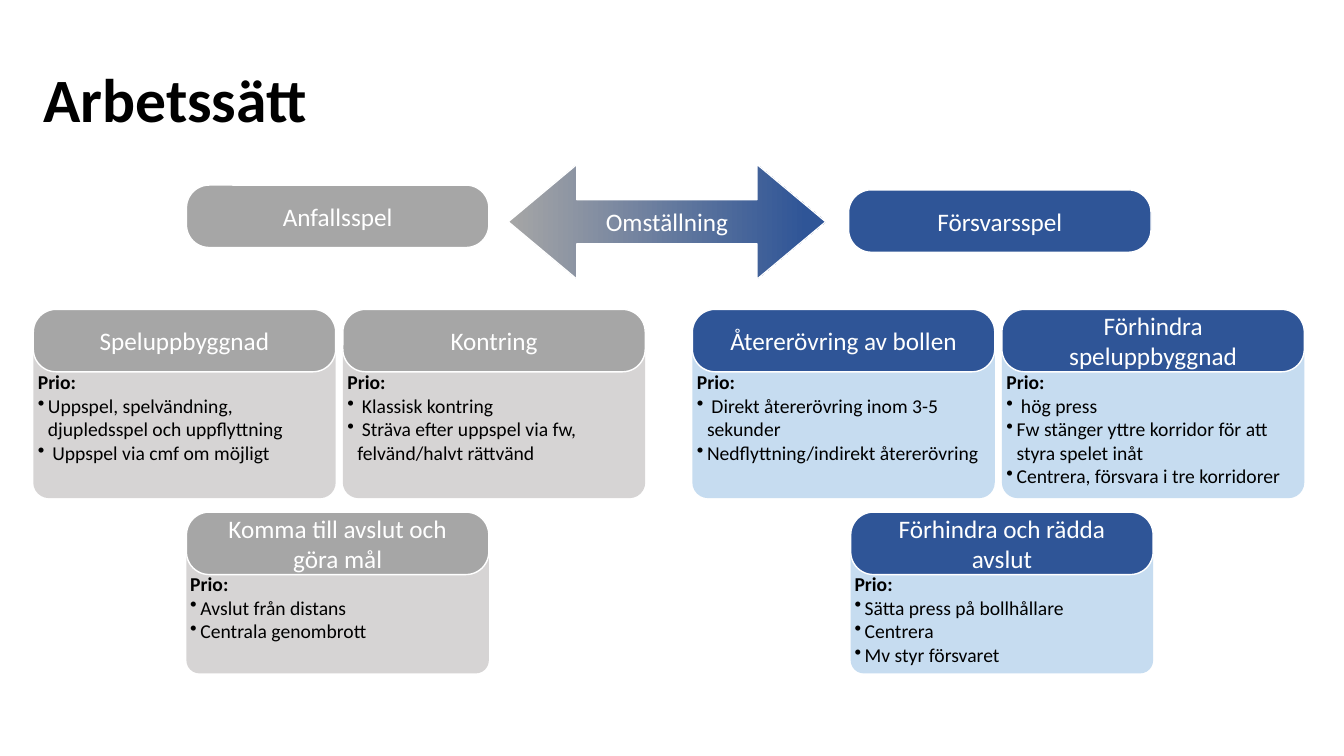
"""Build a slide on ways of working in attack, transition and defence."""
from pptx import Presentation
from pptx.dml.color import RGBColor
from pptx.enum.shapes import MSO_SHAPE as Preset
from pptx.enum.text import MSO_ANCHOR as Anchor, MSO_AUTO_SIZE as AutoSize, PP_ALIGN as Align
from pptx.oxml.ns import qn
from pptx.oxml.xmlchemy import OxmlElement
from pptx.util import Pt

FONT = "Calibri"
BLACK, WHITE = "000000", "FFFFFF"
ATTACK, ATTACK_PALE = "A6A6A6", "D0CECE"
DEFENCE, DEFENCE_PALE = "2F5597", "BDD7EE"
CARD_WIDTH, HEADER_HEIGHT, PANEL_DROP = 216, 44.6, 19.4
TOP_ROW, BOTTOM_ROW = (221, 115.4), (365.8, 95.8)

CARDS = [
    (23.8, TOP_ROW, ATTACK, ATTACK_PALE, "Speluppbyggnad",
     ["Uppspel, spelvändning, djupledsspel och uppflyttning", " Uppspel via cmf om möjligt"]),
    (244.9, TOP_ROW, ATTACK, ATTACK_PALE, "Kontring",
     [" Klassisk kontring", " Sträva efter uppspel via fw, felvänd/halvt rättvänd"]),
    (494.6, TOP_ROW, DEFENCE, DEFENCE_PALE, "Återerövring av bollen",
     [" Direkt återerövring inom 3-5 sekunder", "Nedflyttning/indirekt återerövring"]),
    (715.7, TOP_ROW, DEFENCE, DEFENCE_PALE, "Förhindra speluppbyggnad",
     [" hög press", "Fw stänger yttre korridor för att styra spelet inåt",
      "Centrera, försvara i tre korridorer"]),
    (133.2, BOTTOM_ROW, ATTACK, ATTACK_PALE, "Komma till avslut och göra mål",
     ["Avslut från distans", "Centrala genombrott"]),
    (607.7, BOTTOM_ROW, DEFENCE, DEFENCE_PALE, "Förhindra och rädda avslut",
     ["Sätta press på bollhållare", "Centrera", "Mv styr försvaret"]),
]


def rgb(colour):
    """Turn a hex string into a colour."""
    return RGBColor.from_string(colour)


def add_run(paragraph, wording, size, colour, bold=False):
    """Append a formatted run to a paragraph."""
    run = paragraph.add_run()
    run.text = wording
    run.font.name, run.font.size, run.font.bold = FONT, Pt(size), bold
    run.font.color.rgb = rgb(colour)


def add_preset(slide, preset, box, adjustments):
    """Add a preset shape without shadow, with its corners or heads adjusted."""
    preset_shape = slide.shapes.add_shape(preset, *map(Pt, box))
    preset_shape.shadow.inherit = False
    for index, value in enumerate(adjustments):
        preset_shape.adjustments[index] = value
    preset_shape.text_frame.word_wrap = True
    return preset_shape


def label(preset_shape, wording):
    """Give a shape a white outline and a centred white label."""
    preset_shape.line.color.rgb = rgb(WHITE)
    preset_shape.line.width = Pt(1)
    preset_shape.text_frame.vertical_anchor = Anchor.MIDDLE
    caption = preset_shape.text_frame.paragraphs[0]
    caption.alignment = Align.CENTER
    add_run(caption, wording, 18, WHITE)


def add_header(slide, left, top, colour, wording):
    """Add a rounded heading."""
    header = add_preset(slide, Preset.ROUNDED_RECTANGLE,
                        (left, top, CARD_WIDTH, HEADER_HEIGHT), [0.364])
    header.fill.solid()
    header.fill.fore_color.rgb = rgb(colour)
    label(header, wording)


def add_bullet(paragraph):
    """Give a paragraph a bullet with a hanging indent."""
    properties = paragraph._p.get_or_add_pPr()
    properties.set("marL", str(Pt(7.2)))
    properties.set("indent", str(Pt(-7.2)))
    bullet = OxmlElement("a:buChar")
    bullet.set("char", "•")
    properties.append(bullet)


def add_panel(slide, box, colour, priorities):
    """Add a translucent panel that lists priorities."""
    panel = add_preset(slide, Preset.ROUNDED_RECTANGLE, box, [0.097])
    panel.fill.solid()
    panel.fill.fore_color.rgb = rgb(colour)
    alpha = OxmlElement("a:alpha")
    alpha.set("val", "86000")
    panel._element.spPr.find(qn("a:solidFill"))[0].append(alpha)
    panel.line.fill.background()
    frame = panel.text_frame
    frame.vertical_anchor = Anchor.TOP
    frame.margin_left = frame.margin_right = Pt(0)
    frame.margin_top = Pt(20.7)
    heading = frame.paragraphs[0]
    heading.alignment = Align.LEFT
    add_run(heading, "Prio:", 14, BLACK, True)
    for priority in priorities:
        entry = frame.add_paragraph()
        entry.alignment = Align.LEFT
        add_bullet(entry)
        add_run(entry, priority, 14, BLACK)


def add_card(slide, left, row, colour, pale, wording, priorities):
    """Add a panel with its heading on top."""
    top, panel_height = row
    add_panel(slide, (left, top + PANEL_DROP, CARD_WIDTH, panel_height), pale, priorities)
    add_header(slide, left, top, colour, wording)


def add_transition(slide):
    """Add the double arrow between attack and defence."""
    arrow = add_preset(slide, Preset.LEFT_RIGHT_ARROW, (363, 117.4, 226.8, 82), [0.383, 0.598])
    arrow.fill.gradient()
    arrow.fill.gradient_angle = 0
    for stop, position, colour in zip(arrow.fill.gradient_stops, (0, 0.94), (ATTACK, DEFENCE)):
        stop.position = position
        stop.color.rgb = rgb(colour)
    label(arrow, "Omställning")


def set_title(slide, wording):
    """Place and fill the title placeholder."""
    title = slide.shapes.title
    title.left, title.top, title.width, title.height = map(Pt, (23.8, 46, 535, 79.2))
    frame = title.text_frame
    frame.word_wrap = True
    frame.auto_size = AutoSize.NONE
    frame.vertical_anchor = Anchor.TOP
    line = frame.paragraphs[0]
    line.alignment = Align.LEFT
    line.line_spacing = 0.9
    add_run(line, wording, 44, BLACK, True)


def main():
    """Build and save the presentation."""
    deck = Presentation()
    deck.slide_width, deck.slide_height = Pt(960), Pt(540)
    slide = deck.slides.add_slide(deck.slide_layouts[5])
    set_title(slide, "Arbetssätt")
    add_transition(slide)
    add_header(slide, 133.2, 132.2, ATTACK, "Anfallsspel")
    add_header(slide, 606.2, 135.6, DEFENCE, "Försvarsspel")
    for card in CARDS:
        add_card(slide, *card)
    deck.save("out.pptx")


if __name__ == "__main__":
    main()
